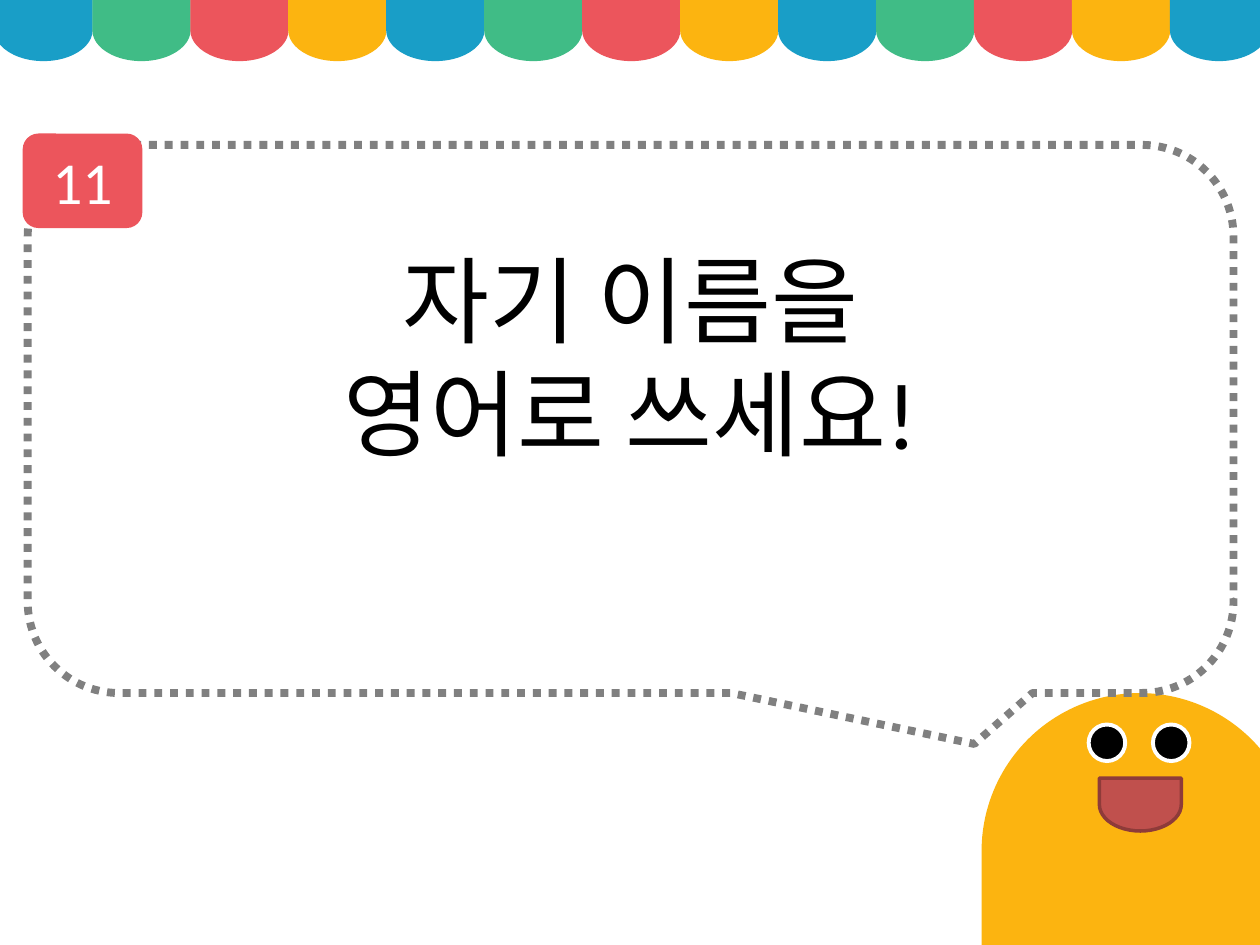
import pptx
import pptx.util
import pptx.dml.color
import pptx.enum.dml
import pptx.enum.shapes
import pptx.enum.text

Inches = pptx.util.Inches
Pt = pptx.util.Pt
KIND = pptx.enum.shapes.MSO_SHAPE
DELAY = KIND.FLOWCHART_DELAY

COLORS = {
    "blue": "199EC7",
    "green": "40BC86",
    "red": "EC555C",
    "yellow": "FCB410",
    "black": "000000",
    "white": "FFFFFF",
    "mouth": "C0504D",
    "lip": "8E3B39",
    "gray": "808080",
}


def color(name):
    return pptx.dml.color.RGBColor.from_string(COLORS[name])


def add_shape(shapes, kind, box, fill=None, line=None, width=0, turn=0):
    shape = shapes.add_shape(kind, *map(Inches, box))
    shape.shadow.inherit = False
    shape.rotation = turn
    if fill:
        shape.fill.solid()
        shape.fill.fore_color.rgb = color(fill)
    else:
        shape.fill.background()
    if line:
        shape.line.color.rgb = color(line)
        shape.line.width = Pt(width)
    else:
        shape.line.fill.background()
    return shape


def set_text(shape, text, size, ink):
    frame = shape.text_frame
    frame.word_wrap = True
    frame.text = text
    for para in frame.paragraphs:
        para.alignment = pptx.enum.text.PP_ALIGN.CENTER
        for run in para.runs:
            run.font.name = "Calibri"
            run.font.size = Pt(size)
            run.font.color.rgb = color(ink)


def add_awning(slide):
    group = slide.shapes.add_group_shape().shapes
    tints = ["blue", "green", "red", "yellow"]
    count, first, last = 13, 0.1, 9.43
    step = (last - first) / (count - 1)
    for i in range(count):
        box = (first + i * step, -0.15, 0.49, 0.78)
        add_shape(group, DELAY, box, tints[i % len(tints)], turn=90)


def add_buddy(slide):
    group = slide.shapes.add_group_shape().shapes
    add_shape(group, DELAY, (7.79, 5.5, 2.51, 2.51), "yellow", turn=270)
    for left in (8.64, 9.15):
        add_shape(group, KIND.OVAL, (left, 5.75, 0.29, 0.29),
                  "black", "white", 2.25)
    add_shape(group, DELAY, (8.84, 6.06, 0.42, 0.65), "mouth", "lip", 2, 90)


def add_bubble(slide):
    bubble = add_shape(slide.shapes, KIND.ROUNDED_RECTANGULAR_CALLOUT,
                       (0.22, 1.15, 9.57, 4.35), line="gray", width=4.5)
    bubble.line.dash_style = pptx.enum.dml.MSO_LINE.ROUND_DOT
    for i, value in enumerate((0.285, 0.593, 0.167)):
        bubble.adjustments[i] = value


def add_badge(slide, text):
    badge = add_shape(slide.shapes, KIND.ROUNDED_RECTANGLE,
                      (0.18, 1.06, 0.95, 0.75), "red")
    set_text(badge, text, 34, "white")
    badge.text_frame.vertical_anchor = pptx.enum.text.MSO_ANCHOR.MIDDLE


def add_task(slide, text):
    box = slide.shapes.add_textbox(*map(Inches, (0.22, 1.87, 9.57, 1.92)))
    set_text(box, text, 54, "black")
    box.text_frame.auto_size = pptx.enum.text.MSO_AUTO_SIZE.SHAPE_TO_FIT_TEXT


def main():
    deck = pptx.Presentation()
    deck.slide_width, deck.slide_height = Inches(10), Inches(7.5)
    slide = deck.slides.add_slide(deck.slide_layouts[6])

    # Scenery
    add_awning(slide)
    add_buddy(slide)

    # Speech bubble with number and task
    add_bubble(slide)
    add_badge(slide, "11")
    add_task(slide, "자기 이름을\n영어로 쓰세요!")

    deck.save("out.pptx")


if __name__ == "__main__":
    main()
